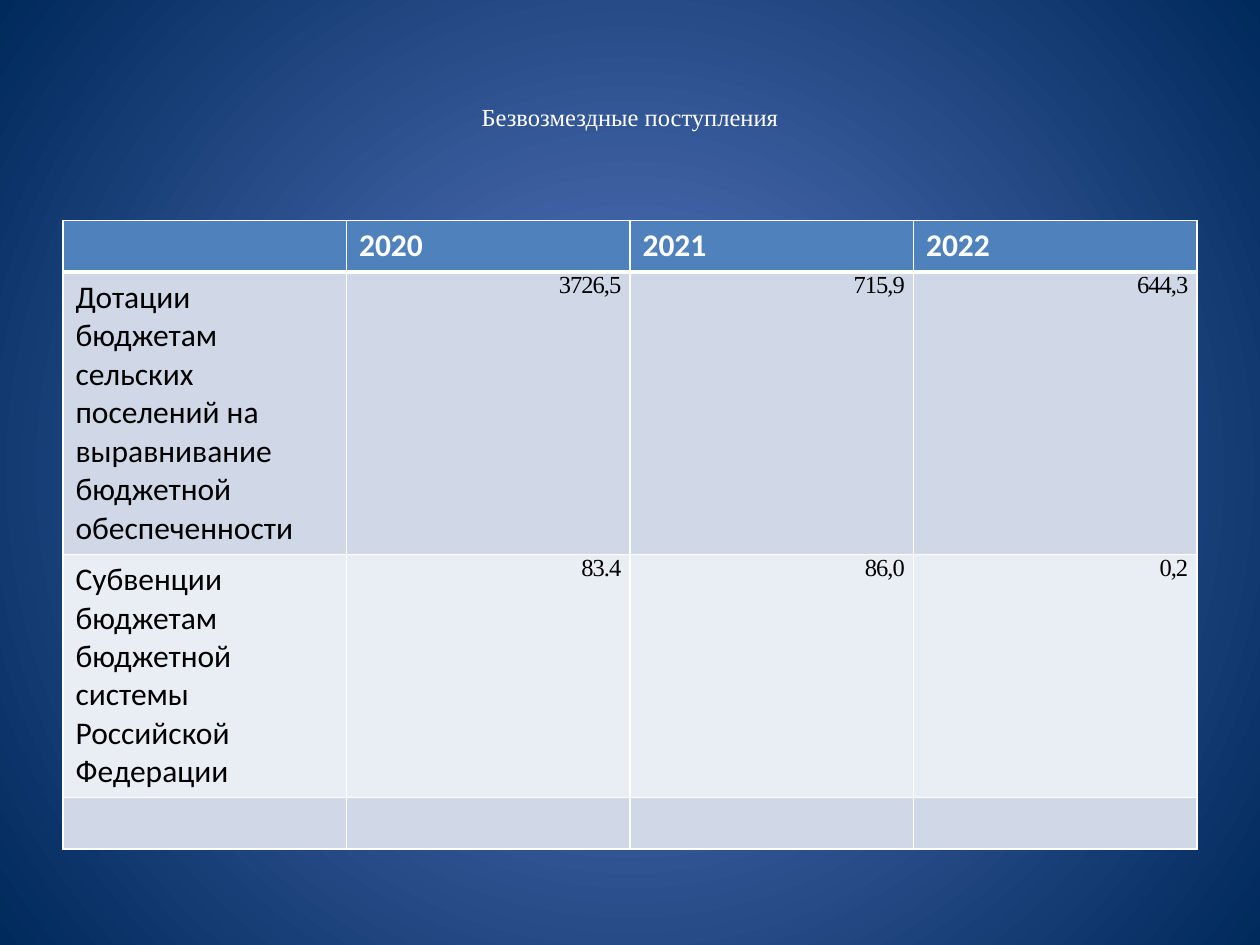
from dataclasses import dataclass

from lxml import etree
from pptx import Presentation
from pptx import util as u
from pptx.dml.color import RGBColor
from pptx.enum import text
from pptx.oxml.ns import qn


@dataclass(frozen=True)
class Theme:
    white: str = "FFFFFF"
    black: str = "000000"
    header: str = "4F81BD"
    bands: tuple = ("D0D8E8", "E9EDF4")
    glow: str = "5E7CC5"
    edge: str = "00295C"
    body_font: str = "Calibri"
    number_font: str = "Times New Roman"
    body_size: int = 18
    small_size: int = 14


class SlideBuilder:
    def __init__(self, slide, theme):
        self.slide = slide
        self.theme = theme

    def background(self):
        """Radial gradient spreading from the slide centre."""
        fill = self.slide.background.fill
        fill.gradient()
        for stop, color in zip(fill.gradient_stops, (self.theme.glow, self.theme.edge)):
            stop.color.rgb = RGBColor.from_string(color)
        gradient = next(self.slide.element.iter(qn("a:gradFill")))
        gradient.remove(gradient.find(qn("a:lin")))
        circle = etree.SubElement(gradient, qn("a:path"), path="circle")
        etree.SubElement(circle, qn("a:fillToRect"), {side: "50000" for side in "ltrb"})

    def format_run(self, paragraph, font, size, color, bold=False, spacing=None):
        for run in paragraph.runs:
            run.font.name = font
            run.font.size = u.Pt(size)
            run.font.bold = bold
            run.font.color.rgb = RGBColor.from_string(color)
            if spacing is not None:
                run.font._element.set("spc", str(spacing))

    def title(self, words, left, top, width, height):
        box = self.slide.shapes.add_textbox(*map(u.Inches, (left, top, width, height)))
        frame = box.text_frame
        frame.word_wrap = True
        frame.vertical_anchor = text.MSO_ANCHOR.MIDDLE
        frame.text = words
        paragraph = frame.paragraphs[0]
        paragraph.alignment = text.PP_ALIGN.CENTER
        self.format_run(paragraph, self.theme.number_font, self.theme.small_size, self.theme.white)

    def borders(self, cell, top, bottom):
        properties = cell._tc.get_or_add_tcPr()
        widths = {"lnL": 1, "lnR": 1, "lnT": top, "lnB": bottom}
        for index, (tag, points) in enumerate(widths.items()):
            line = etree.Element(qn(f"a:{tag}"), w=str(u.Pt(points)))
            solid = etree.SubElement(line, qn("a:solidFill"))
            etree.SubElement(solid, qn("a:srgbClr"), val=self.theme.white)
            properties.insert(index, line)

    def cell(self, cell, words, row, column):
        theme = self.theme
        is_header = row == 0
        is_number = row > 0 and column > 0 and words
        cell.fill.solid()
        color = theme.header if is_header else theme.bands[(row - 1) % 2]
        cell.fill.fore_color.rgb = RGBColor.from_string(color)
        self.borders(cell, top=3 if row == 1 else 1, bottom=3 if is_header else 1)
        cell.text_frame.text = words
        paragraph = cell.text_frame.paragraphs[0]
        if is_number:
            cell.margin_left = cell.margin_right = u.Inches(0.07)
            cell.margin_top = cell.margin_bottom = 0
            paragraph.alignment = text.PP_ALIGN.RIGHT
            self.format_run(paragraph, theme.number_font, theme.small_size, theme.black, spacing=-60)
        else:
            self.format_run(paragraph, theme.body_font, theme.body_size,
                            theme.white if is_header else theme.black, bold=is_header)

    def table(self, rows, heights, left, top, width):
        columns = len(rows[0])
        frame = self.slide.shapes.add_table(
            len(rows), columns, u.Inches(left), u.Inches(top),
            u.Inches(width), u.Inches(sum(heights)))
        table = frame.table
        for column in table.columns:
            column.width = u.Inches(width / columns)
        for row, (values, height) in enumerate(zip(rows, heights)):
            table.rows[row].height = u.Inches(height)
            for column, words in enumerate(values):
                self.cell(table.cell(row, column), words, row, column)


def main():
    presentation = Presentation()
    presentation.slide_width = u.Inches(10)
    presentation.slide_height = u.Inches(7.5)
    slide = presentation.slides.add_slide(presentation.slide_layouts[6])
    builder = SlideBuilder(slide, Theme())
    builder.background()
    builder.title("Безвозмездные поступления", 0.5, 0.3, 9, 1.25)
    revenues = [
        ("", "2020", "2021", "2022"),
        ("Дотации бюджетам сельских поселений на выравнивание бюджетной обеспеченности",
         "3726,5", "715,9", "644,3"),
        ("Субвенции бюджетам бюджетной системы Российской Федерации",
         "83.4", "86,0", "0,2"),
        ("", "", "", ""),
    ]
    builder.table(revenues, (0.41, 2.24, 1.93, 0.41), 0.5, 1.75, 9)
    presentation.save("out.pptx")


if __name__ == "__main__":
    main()
